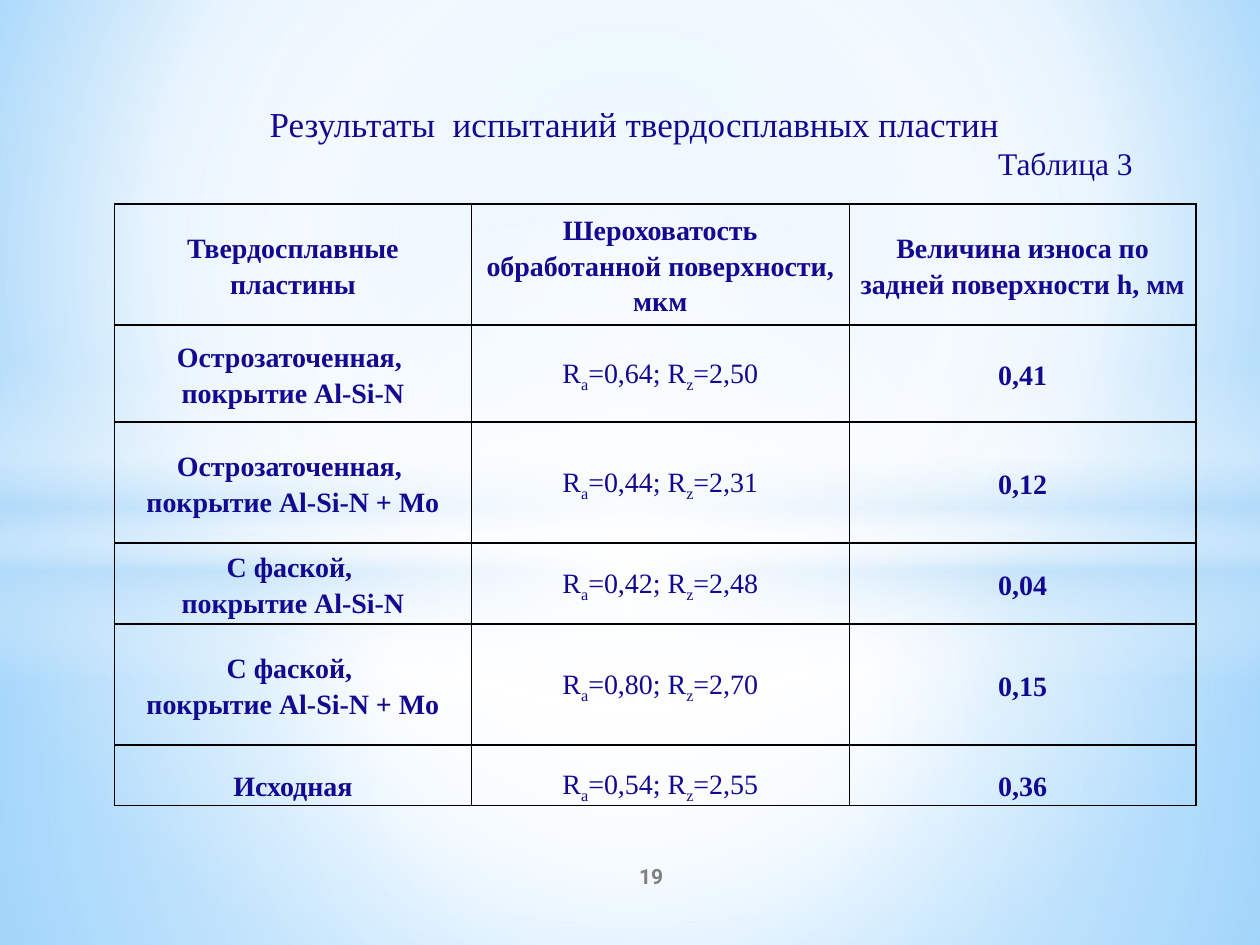
from lxml import etree
from pptx import Presentation
from pptx.dml.color import RGBColor
from pptx.enum.shapes import MSO_SHAPE
from pptx.enum.text import MSO_ANCHOR, MSO_AUTO_SIZE, PP_ALIGN
from pptx.oxml.ns import qn
from pptx.util import Cm, Pt

RECTANGLE, OVAL = MSO_SHAPE.RECTANGLE, MSO_SHAPE.OVAL
CENTER, RIGHT = PP_ALIGN.CENTER, PP_ALIGN.RIGHT
TOP, MIDDLE = MSO_ANCHOR.TOP, MSO_ANCHOR.MIDDLE
NO_AUTOFIT = MSO_AUTO_SIZE.NONE
TITLE_ONLY = 5

SERIF, SANS = "Times New Roman", "Roboto"
NAVY, GRAY, BLACK = "130991", "808080", "000000"
WHITE, PALE_BLUE = "FFFFFF", "B4DCFA"
CENTERED = (50, 50, 50, 50)

HEADERS = ["Твердосплавные пластины", "Шероховатость обработанной поверхности, мкм",
           "Величина износа по задней поверхности h, мм"]
# Insert lines, Ra, Rz, wear
RESULTS = [
    (["Острозаточенная, ", "покрытие Al-Si-N"], "0,64", "2,50", "0,41"),
    (["Острозаточенная, ", "покрытие Al-Si-N + Mo"], "0,44", "2,31", "0,12"),
    (["С фаской, ", "покрытие Al-Si-N"], "0,42", "2,48", "0,04"),
    (["С фаской, ", "покрытие Al-Si-N + Mo"], "0,80", "2,70", "0,15"),
    (["Исходная"], "0,54", "2,55", "0,36"),
]
COLUMN_WIDTHS = [7.19, 7.62, 6.99]
ROW_HEIGHTS = [2.44, 1.96, 2.44, 1.63, 2.44, 1.22]


def color(value):
    return RGBColor.from_string(value)


def add_run(para, text, size, font=SERIF, ink=NAVY, bold=False, baseline=None):
    span = para.add_run()
    span.text = text
    span.font.size, span.font.name, span.font.bold = Pt(size), font, bold
    span.font.color.rgb = color(ink)
    if baseline is not None:
        span.font._element.set("baseline", str(baseline * 1000))


def set_gradient(fill, holder, stops, focus=None, angle=90):
    """Stops are (position, colour, opacity), all in percent."""
    fill.solid()
    solid = holder.find(qn("a:solidFill"))
    gradient = etree.Element(qn("a:gradFill"), rotWithShape="1")
    stop_list = etree.SubElement(gradient, qn("a:gsLst"))
    for position, value, opacity in stops:
        stop = etree.SubElement(stop_list, qn("a:gs"), pos=str(position * 1000))
        tint = etree.SubElement(stop, qn("a:srgbClr"), val=value)
        if opacity < 100:
            etree.SubElement(tint, qn("a:alpha"), val=str(opacity * 1000))
    if focus:
        radial = etree.SubElement(gradient, qn("a:path"), path="circle")
        sides = {side: str(part * 1000) for side, part in zip("ltrb", focus)}
        etree.SubElement(radial, qn("a:fillToRect"), **sides)
    else:
        etree.SubElement(gradient, qn("a:lin"), ang=str(angle * 60000), scaled="0")
    holder.replace(solid, gradient)


def add_glow(page, kind, box, stops, focus=None):
    glow = page.shapes.add_shape(kind, *map(Cm, box))
    glow.shadow.inherit = False
    glow.line.fill.background()
    set_gradient(glow.fill, glow._element.spPr, stops, focus)


def add_backdrop(page, width, height):
    fill = page.background.fill
    fill.solid()
    set_gradient(fill, page._element.find(".//" + qn("p:bgPr")),
                 [(0, "9ED5FF", 100), (60, WHITE, 100), (100, "5BB9FF", 100)],
                 (20, 10, 20, 60))
    horizon = 10.74
    # Lower and upper halves
    add_glow(page, RECTANGLE, (0, horizon, width, height - horizon),
             [(0, WHITE, 92), (37, WHITE, 77), (100, PALE_BLUE, 80)], CENTERED)
    add_glow(page, RECTANGLE, (0, 0, width, horizon),
             [(0, WHITE, 90), (48, WHITE, 63), (100, PALE_BLUE, 80)], CENTERED)
    # Band along the horizon
    add_glow(page, RECTANGLE, (0, 7.37, width, 6.35),
             [(0, WHITE, 0), (29, WHITE, 30), (45, PALE_BLUE, 40),
              (55, WHITE, 26), (65, PALE_BLUE, 60), (100, WHITE, 0)])
    # Soft light in the middle
    add_glow(page, OVAL, (0, 4.45, width, 14.17),
             [(0, WHITE, 100), (54, WHITE, 0)], CENTERED)


def place_title(page, box):
    title = page.shapes.title
    page.shapes._spTree.append(title._element)  # in front of the backdrop
    title.left, title.top, title.width, title.height = map(Cm, box)
    frame = title.text_frame
    frame.word_wrap, frame.auto_size, frame.vertical_anchor = True, NO_AUTOFIT, TOP
    heading = frame.paragraphs[0]
    heading.alignment = CENTER
    add_run(heading, "Результаты  испытаний твердосплавных пластин", 20)
    caption = frame.add_paragraph()
    caption.alignment = RIGHT
    add_run(caption, "Таблица 3", 18)


def add_borders(cell):
    properties = cell._tc.get_or_add_tcPr()
    for index, side in enumerate("LRTB"):
        line = etree.Element(qn("a:ln" + side), w=str(Pt(1)))
        ink = etree.SubElement(line, qn("a:solidFill"))
        etree.SubElement(ink, qn("a:srgbClr"), val=BLACK)
        properties.insert(index, line)


def fill_cell(cell, lines, top_gap=0):
    """Each line is a list of (text, bold, baseline) runs."""
    cell.fill.background()
    add_borders(cell)
    cell.vertical_anchor = MIDDLE
    cell.margin_left = cell.margin_right = Cm(0.19)
    cell.margin_top, cell.margin_bottom = Cm(top_gap), 0
    frame = cell.text_frame
    for index, runs in enumerate(lines):
        para = frame.add_paragraph() if index else frame.paragraphs[0]
        para.alignment, para.line_spacing = CENTER, 1.15
        for text, bold, baseline in runs:
            add_run(para, text, 16, bold=bold, baseline=baseline)


def bold_lines(*texts):
    return [[(text, True, None)] for text in texts]


def roughness_line(ra, rz):
    return [("R", False, None), ("a", False, -25), (f"={ra}; R", False, 0),
            ("z", False, -25), (f"={rz}", False, 0)]


def add_results(page, left, top):
    frame = page.shapes.add_table(len(ROW_HEIGHTS), len(COLUMN_WIDTHS), Cm(left), Cm(top),
                                  Cm(sum(COLUMN_WIDTHS)), Cm(sum(ROW_HEIGHTS)))
    table = frame.table
    table.first_row = table.horz_banding = False
    for column, width in zip(table.columns, COLUMN_WIDTHS):
        column.width = Cm(width)
    for row, height in zip(table.rows, ROW_HEIGHTS):
        row.height = Cm(height)
    rows = [[bold_lines(header) for header in HEADERS]]
    rows += [[bold_lines(*insert), [roughness_line(ra, rz)], bold_lines(wear)]
             for insert, ra, rz, wear in RESULTS]
    for index, contents in enumerate(rows):
        top_gap = 0.37 if index == len(rows) - 1 else 0
        for cell, lines in zip(table.rows[index].cells, contents):
            fill_cell(cell, lines, top_gap)


def add_page_number(page, box):
    frame = page.shapes.add_textbox(*map(Cm, box)).text_frame
    frame.word_wrap, frame.vertical_anchor = True, MIDDLE
    para = frame.paragraphs[0]
    para.alignment = CENTER
    add_run(para, "19", 12, SANS, GRAY, bold=True)


def main():
    width, height = 25.4, 19.05
    deck = Presentation()
    deck.slide_width, deck.slide_height = Cm(width), Cm(height)
    page = deck.slides.add_slide(deck.slide_layouts[TITLE_ONLY])
    add_backdrop(page, width, height)
    place_title(page, (2.49, 1.93, 20.6, 1.88))
    add_results(page, 2.31, 4.11)
    add_page_number(page, (10.59, 17.15, 5.08, 1.02))
    deck.save("out.pptx")


if __name__ == "__main__":
    main()
